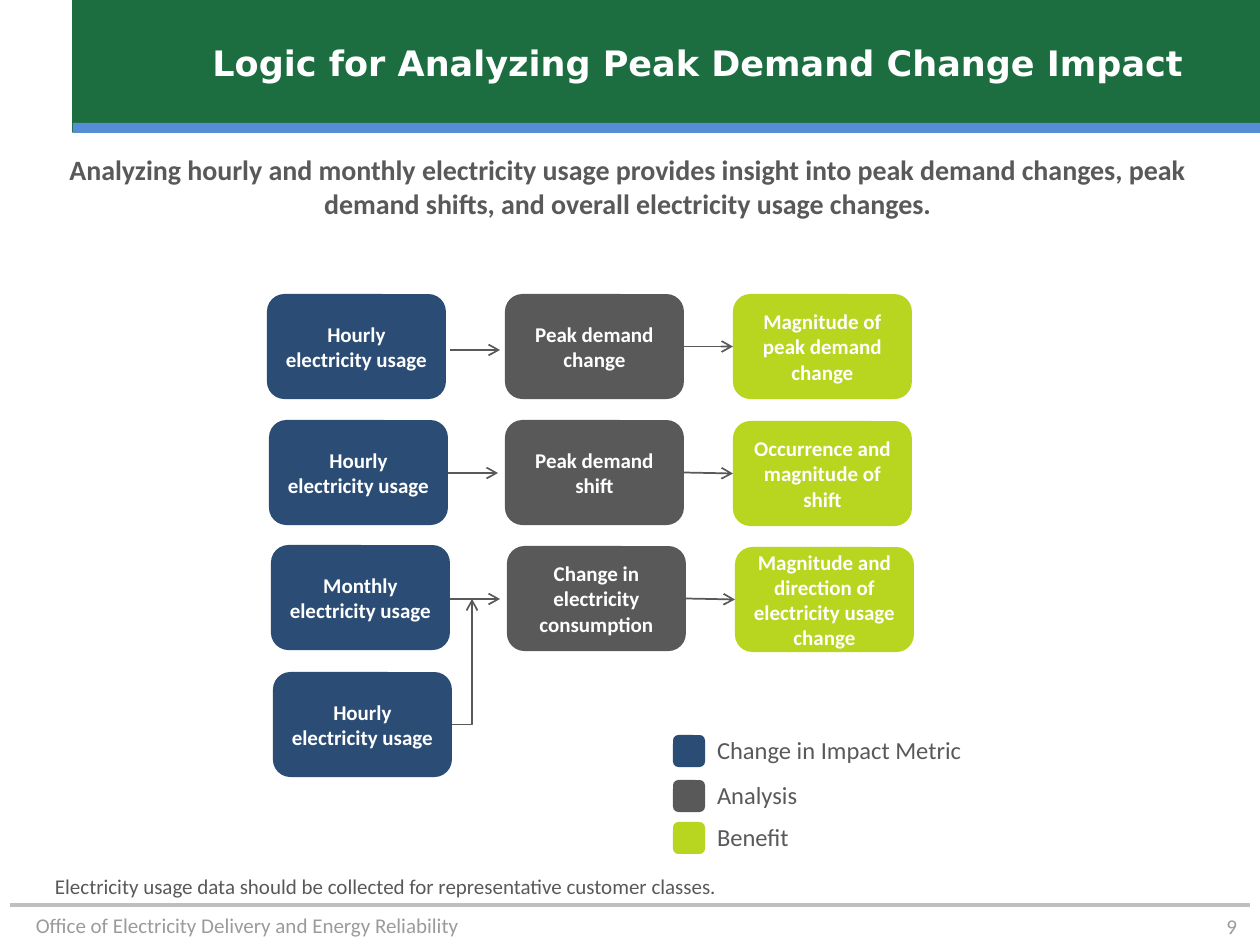
from dataclasses import dataclass

from lxml import etree
from pptx import Presentation
from pptx import util as u
from pptx.dml.color import RGBColor
from pptx.enum import shapes, text
from pptx.oxml.ns import qn

PX_PER_INCH = 126


def px(n):
    return u.Emu(round(n * 914400 / PX_PER_INCH))


@dataclass(frozen=True)
class Theme:
    header: str = "1C6E41"
    accent: str = "558ED5"
    metric: str = "2B4C74"
    analysis: str = "595959"
    benefit: str = "B8D51F"
    ink: str = "595959"
    white: str = "FFFFFF"
    rule: str = "BFBFBF"
    footer: str = "9B9B9B"
    body_font: str = "Calibri"
    title_font: str = "DejaVu Sans"
    title_size: int = 20
    lead_size: int = 16
    legend_size: int = 14
    small_size: int = 12


class SlideBuilder:
    """Holds the theme and the slide being filled."""

    def __init__(self, slide, theme):
        self.slide = slide
        self.theme = theme

    def set_words(self, shape, words, size, color, bold=False, font=None,
                  align=text.PP_ALIGN.LEFT, anchor=text.MSO_ANCHOR.TOP,
                  insets=(13, 6, 13, 6)):
        frame = shape.text_frame
        left, top, right, bottom = map(px, insets)
        frame_format = dict(
            word_wrap=True, auto_size=text.MSO_AUTO_SIZE.NONE,
            vertical_anchor=anchor, margin_left=left, margin_top=top,
            margin_right=right, margin_bottom=bottom)
        for name, value in frame_format.items():
            setattr(frame, name, value)
        frame.text = words
        paragraph = frame.paragraphs[0]
        paragraph.alignment = align
        paragraph.space_before = u.Pt(0)
        run_font = paragraph.runs[0].font
        font_format = dict(name=font or self.theme.body_font,
                           size=u.Pt(size), bold=bold)
        for name, value in font_format.items():
            setattr(run_font, name, value)
        run_font.color.rgb = RGBColor.from_string(color)
        return paragraph

    def placeholder(self, index, box, words, size, color, **style):
        """Fill a placeholder and bring it in front of the header band."""
        holder = self.slide.placeholders[index]
        for name, value in zip(("left", "top", "width", "height"), box):
            setattr(holder, name, px(value))
        paragraph = self.set_words(holder, words, size, color, bold=True,
                                   align=text.PP_ALIGN.CENTER, **style)
        properties = paragraph._p.get_or_add_pPr()
        properties.set("marL", "0")
        properties.set("indent", "0")
        etree.SubElement(properties, qn("a:buNone"))
        self.slide.shapes._spTree.append(holder._element)

    def block(self, box, fill, kind=shapes.MSO_SHAPE.RECTANGLE):
        shape = self.slide.shapes.add_shape(kind, *map(px, box))
        shape.shadow.inherit = False
        shape.fill.solid()
        shape.fill.fore_color.rgb = RGBColor.from_string(fill)
        shape.line.fill.background()
        return shape

    def rounded(self, box, fill):
        return self.block(box, fill, shapes.MSO_SHAPE.ROUNDED_RECTANGLE)

    def step(self, x, y, words, fill):
        shape = self.rounded((x, y, 179, 105), fill)
        self.set_words(shape, words, self.theme.small_size, self.theme.white,
                       bold=True, align=text.PP_ALIGN.CENTER,
                       anchor=text.MSO_ANCHOR.MIDDLE, insets=(13,) * 4)
        return shape

    def label(self, box, words, size, color, **style):
        textbox = self.slide.shapes.add_textbox(*map(px, box))
        self.set_words(textbox, words, size, color, **style)

    def line(self, start, end, color, width, kind=shapes.MSO_CONNECTOR.STRAIGHT):
        connector = self.slide.shapes.add_connector(
            kind, *map(px, (*start, *end)))
        connector.line.color.rgb = RGBColor.from_string(color)
        connector.line.width = u.Pt(width)
        etree.SubElement(connector._element.spPr, qn("a:effectLst"))
        return connector

    def arrow(self, start, end, **options):
        connector = self.line(start, end, self.theme.ink, 1, **options)
        etree.SubElement(connector.line._get_or_add_ln(), qn("a:tailEnd"),
                         type="arrow")
        return connector


def add_frame(page):
    """Header band, footer rule and footer wording."""
    theme = page.theme
    band = page.block((73, 0, 1187, 132), theme.header)
    band.line.color.rgb = RGBColor.from_string(theme.header)
    band.line.width = u.Pt(1)
    page.block((73, 123, 1187, 10), theme.accent)
    page.line((10, 905), (1250, 905), theme.rule, 1.75)
    page.label((0, 907, 472, 38),
               "Office of Electricity Delivery and Energy Reliability",
               theme.small_size, theme.footer, align=text.PP_ALIGN.RIGHT)
    page.label((935, 908, 315, 37), "9", theme.small_size, theme.footer,
               align=text.PP_ALIGN.RIGHT, anchor=text.MSO_ANCHOR.MIDDLE,
               insets=(0, 0, 13, 0))


def add_flow(page):
    theme = page.theme
    # Each row: metric, analysis and benefit, as (left, top, words)
    rows = [
        ((267, 294, "Hourly electricity usage"),
         (505, 294, "Peak demand change"),
         (733, 294, "Magnitude of peak demand change")),
        ((269, 420, "Hourly electricity usage"),
         (505, 420, "Peak demand shift"),
         (733, 421, "Occurrence and magnitude of shift")),
        ((271, 545, "Monthly electricity usage"),
         (507, 546, "Change in electricity consumption"),
         (735, 547, "Magnitude and direction of electricity usage change")),
    ]
    metric_arrows = [((450, 350), (500, 350)),
                     ((448, 473), (498, 473)),
                     ((450, 599), (500, 599))]
    fills = (theme.metric, theme.analysis, theme.benefit)
    for row, (start, end) in zip(rows, metric_arrows):
        metric, analysis, benefit = [
            page.step(*cell, fill) for cell, fill in zip(row, fills)]
        page.arrow(start, end)
        result = page.arrow((684, start[1]), (733, start[1]))
        result.begin_connect(analysis, 3)
        result.end_connect(benefit, 1)

    hourly = page.step(273, 672, "Hourly electricity usage", theme.metric)
    joining = page.arrow((452, 724), (472, 599),
                         kind=shapes.MSO_CONNECTOR.ELBOW)
    joining._element.spPr.find(qn("a:prstGeom")).set("prst", "bentConnector2")
    joining.begin_connect(hourly, 3)


def add_legend(page):
    theme = page.theme
    entries = [(735, "Change in Impact Metric", theme.metric),
               (780, "Analysis", theme.analysis),
               (822, "Benefit", theme.benefit)]
    for top, words, fill in entries:
        page.rounded((673, top, 32, 32), fill)
        page.label((704, top, 336, 32), words, theme.legend_size, theme.ink,
                   insets=(13, 0, 13, 0))


def main():
    deck = Presentation()
    deck.slide_width, deck.slide_height = px(1260), px(945)
    theme = Theme()
    page = SlideBuilder(deck.slides.add_slide(deck.slide_layouts[1]), theme)
    add_frame(page)
    page.placeholder(0, (136, 0, 1124, 126),
                     "Logic for Analyzing Peak Demand Change Impact",
                     theme.title_size, theme.white, font=theme.title_font,
                     anchor=text.MSO_ANCHOR.MIDDLE)
    page.placeholder(1, (42, 147, 1172, 84),
                     "Analyzing hourly and monthly electricity usage provides "
                     "insight into peak demand changes, peak demand shifts, "
                     "and overall electricity usage changes.",
                     theme.lead_size, theme.ink)
    add_flow(page)
    add_legend(page)
    page.label((42, 861, 720, 42),
               "Electricity usage data should be collected for "
               "representative customer classes.",
               theme.small_size, theme.ink, insets=(13,) * 4)
    deck.save("out.pptx")


if __name__ == "__main__":
    main()
